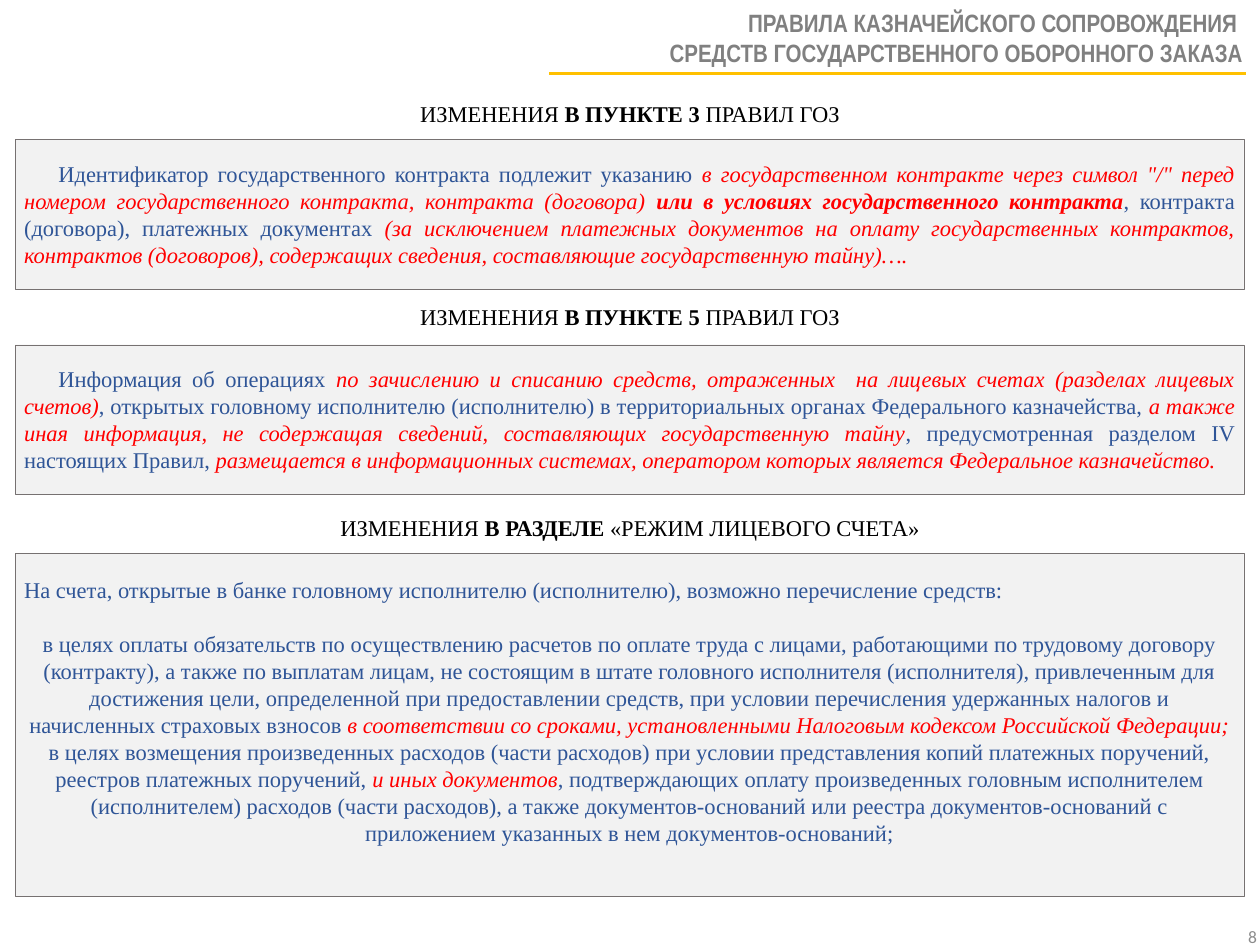
"""Build the slide on amendments to the treasury support rules."""
import pptx
import pptx.util
import pptx.dml.color
import pptx.enum.shapes
import pptx.enum.text
import pptx.oxml.ns
from lxml import etree

Pt = pptx.util.Pt
ALIGN = pptx.enum.text.PP_ALIGN
qn = pptx.oxml.ns.qn


def rgb(value):
    return pptx.dml.color.RGBColor.from_string(value)


def write(p, text, size=18, font="Times New Roman", color="000000", bold=False, italic=False):
    for i, line in enumerate(text.split("\n")):
        if i:
            p.add_line_break()
        r = p.add_run()
        r.text = line
        r.font.size = Pt(size)
        r.font.name = font
        r.font.color.rgb = rgb(color)
        r.font.bold = bold
        r.font.italic = italic


old = dict(color="2F5597")
new = dict(color="FF0000", italic=True)
new_bold = dict(new, bold=True)

clause_3 = [
    ("Идентификатор государственного контракта подлежит указанию ", old),
    ("в государственном контракте через символ \"/\" перед номером государственного контракта, "
     "контракта (договора) ", new),
    ("или в условиях государственного контракта", new_bold),
    (", контракта (договора), платежных документах ", old),
    ("(за исключением платежных документов на оплату государственных контрактов, контрактов "
     "(договоров), содержащих сведения, составляющие государственную тайну)….", new),
]
clause_5 = [
    ("Информация об операциях ", old),
    ("по зачислению и списанию средств, отраженных  на лицевых счетах "
     "(разделах лицевых счетов)", new),
    (", открытых головному исполнителю (исполнителю) в территориальных органах "
     "Федерального казначейства, ", old),
    ("а также иная информация, не содержащая сведений, составляющих государственную тайну", new),
    (", предусмотренная разделом IV настоящих Правил, ", old),
    ("размещается в информационных системах, оператором которых является "
     "Федеральное казначейство.", new),
]
accounts = [
    ("На счета, открытые в банке головному исполнителю (исполнителю), "
     "возможно перечисление средств:", old),
]
wages = [
    ("в целях оплаты обязательств по осуществлению расчетов по оплате труда с лицами, "
     "работающими по трудовому договору (контракту), а также по выплатам лицам, не состоящим "
     "в штате головного исполнителя (исполнителя), привлеченным для достижения цели, "
     "определенной при предоставлении средств, при условии перечисления удержанных налогов "
     "и начисленных страховых взносов ", old),
    ("в соответствии со сроками, установленными Налоговым кодексом Российской Федерации;", new),
]
expenses = [
    ("в целях возмещения произведенных расходов (части расходов) при условии представления "
     "копий платежных поручений, реестров платежных поручений, ", old),
    ("и иных документов", new),
    (", подтверждающих оплату произведенных головным исполнителем (исполнителем) расходов "
     "(части расходов), а также документов-оснований или реестра документов-оснований "
     "с приложением указанных в нем документов-оснований;", old),
]

# heading top, bold words, rest of heading, box top, box height, bottom inset, paragraphs
sections = [
    (76.3, "В ПУНКТЕ 3 ", "ПРАВИЛ ГОЗ", 111.6, 119.5, 3.6,
     [(clause_3, ALIGN.JUSTIFY, 27.4, 11)]),
    (239, "В ПУНКТЕ 5 ", "ПРАВИЛ ГОЗ", 275.8, 119.5, 3.6,
     [(clause_5, ALIGN.JUSTIFY, 27.4, 11)]),
    (407.5, "В РАЗДЕЛЕ ", "«РЕЖИМ ЛИЦЕВОГО СЧЕТА»", 442.8, 274.3, 25.2,
     [(accounts, ALIGN.LEFT, 0, 0), (wages, ALIGN.CENTER, 0, 21.6),
      (expenses, ALIGN.CENTER, 0, 0)]),
]

prs = pptx.Presentation()
prs.slide_width = Pt(1008)
prs.slide_height = Pt(756)
s = prs.slides.add_slide(prs.slide_layouts[6])

title = s.shapes.add_textbox(Pt(7.2), Pt(0.7), Pt(997.2), Pt(58.3))
tf = title.text_frame
tf.word_wrap = True
tf.margin_left = tf.margin_right = Pt(10)
tf.margin_top = tf.margin_bottom = Pt(5)
p = tf.paragraphs[0]
p.alignment = ALIGN.RIGHT
write(p, "ПРАВИЛА КАЗНАЧЕЙСКОГО СОПРОВОЖДЕНИЯ \nСРЕДСТВ ГОСУДАРСТВЕННОГО ОБОРОННОГО ЗАКАЗА",
      size=20, font="Arial Narrow", color="808080", bold=True)

rule = s.shapes.add_connector(pptx.enum.shapes.MSO_CONNECTOR.STRAIGHT,
                              Pt(439.2), Pt(59), Pt(996.5), Pt(59))
rule.line.color.rgb = rgb("FFC000")
rule.line.width = Pt(2)
etree.SubElement(rule._element.spPr, qn("a:effectLst"))

for head_top, strong, rest, top, height, bottom, paragraphs in sections:
    heading = s.shapes.add_textbox(0, Pt(head_top), prs.slide_width, Pt(28.8))
    tf = heading.text_frame
    tf.word_wrap = True
    p = tf.paragraphs[0]
    p.alignment = ALIGN.CENTER
    write(p, "ИЗМЕНЕНИЯ ")
    write(p, strong, bold=True)
    write(p, rest)

    sp = s.shapes.add_shape(pptx.enum.shapes.MSO_SHAPE.RECTANGLE,
                            Pt(12.2), Pt(top), Pt(982.8), Pt(height))
    sp.shadow.inherit = False
    sp.fill.solid()
    sp.fill.fore_color.rgb = rgb("EDEDED")
    fill = sp._element.spPr.find(qn("a:solidFill"))
    etree.SubElement(fill[0], qn("a:alpha"), val="69000")
    sp.line.color.rgb = rgb("767171")
    sp.line.width = Pt(0.25)
    tf = sp.text_frame
    tf.word_wrap = True
    tf.vertical_anchor = pptx.enum.text.MSO_ANCHOR.MIDDLE
    tf.margin_bottom = Pt(bottom)
    for i, (runs, align, indent, before) in enumerate(paragraphs):
        p = tf.add_paragraph() if i else tf.paragraphs[0]
        p.alignment = align
        p.space_before = Pt(before)
        p._p.get_or_add_pPr().set("indent", str(Pt(indent)))
        for text, style in runs:
            write(p, text, **style)

number = s.shapes.add_textbox(Pt(991.4), Pt(737.3), Pt(30.2), Pt(25.9))
write(number.text_frame.paragraphs[0], "8", size=14, font="Calibri", color="8C8C8C")

prs.save("out.pptx")
